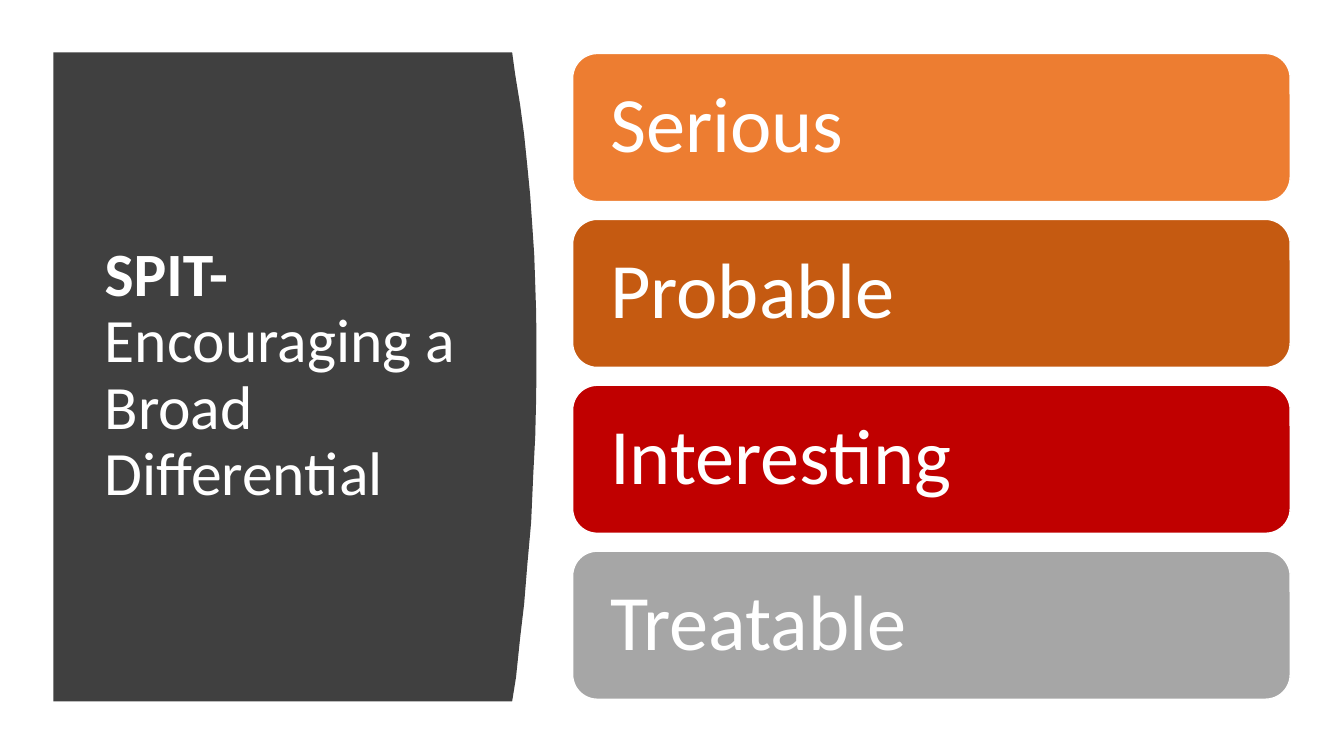
from pptx import Presentation
from pptx import util as u
from pptx.dml.color import RGBColor
from pptx.enum import shapes, text

WHITE = RGBColor(0xFF, 0xFF, 0xFF)
CHARCOAL = RGBColor(0x40, 0x40, 0x40)
ORANGE = RGBColor(0xED, 0x7D, 0x31)
BROWN = RGBColor(0xC5, 0x5A, 0x11)
RED = RGBColor(0xC0, 0x00, 0x00)
GRAY = RGBColor(0xA6, 0xA6, 0xA6)
FONT = "Calibri"


def style_run(r, size, bold=False):
    r.font.name = FONT
    r.font.size = u.Pt(size)
    r.font.bold = bold
    r.font.color.rgb = WHITE


prs = Presentation()
prs.slide_width, prs.slide_height = u.Pt(960), u.Pt(540)
s = prs.slides.add_slide(prs.slide_layouts[6])

LEFT, TOP, BOTTOM = 38.2, 37.4, 501.1
curve = [
    (365.8, TOP), (368, 53.3), (371.5, 74.9), (374.4, 96.5), (376.6, 118.1),
    (378.7, 139.7), (380.2, 161.3), (381.6, 182.2), (382.3, 203), (383, 224),
    (383.2, 254.2), (383, 283.7), (382.3, 311.8), (380.9, 339.1), (379.4, 373),
    (376.6, 404), (374.4, 431.3), (371.5, 455.8), (368.6, 483.8), (365.8, BOTTOM),
]
fb = s.shapes.build_freeform(u.Pt(LEFT), u.Pt(TOP), scale=1.0)
fb.add_line_segments([(u.Pt(x), u.Pt(y)) for x, y in curve + [(LEFT, BOTTOM)]])
sp = fb.convert_to_shape()
sp.shadow.inherit = False
sp.fill.solid()
sp.fill.fore_color.rgb = CHARCOAL
sp.line.fill.background()

tb = s.shapes.add_textbox(u.Pt(67.7), u.Pt(79.9), u.Pt(269.3), u.Pt(377.3))
tf = tb.text_frame
tf.word_wrap = True
tf.vertical_anchor = text.MSO_ANCHOR.MIDDLE
p = tf.paragraphs[0]
p.line_spacing = 0.9
for words, bold in [("SPIT-", True), (" Encouraging a Broad Differential", False)]:
    r = p.add_run()
    r.text = words
    style_run(r, 44, bold)

categories = [("Serious", ORANGE), ("Probable", BROWN), ("Interesting", RED), ("Treatable", GRAY)]
for i, (name, color) in enumerate(categories):
    sp = s.shapes.add_shape(shapes.MSO_SHAPE.ROUNDED_RECTANGLE,
                            u.Pt(409), u.Pt(38.2 + 118.5 * i), u.Pt(512.6), u.Pt(105.8))
    sp.shadow.inherit = False
    sp.fill.solid()
    sp.fill.fore_color.rgb = color
    sp.line.color.rgb = WHITE
    sp.line.width = u.Pt(1)
    tf = sp.text_frame
    tf.word_wrap = True
    tf.vertical_anchor = text.MSO_ANCHOR.MIDDLE
    tf.margin_left = tf.margin_right = tf.margin_top = tf.margin_bottom = u.Pt(21.6)
    tf.text = name
    p = tf.paragraphs[0]
    p.alignment = text.PP_ALIGN.LEFT
    p.line_spacing = 0.9
    style_run(p.runs[0], 56)

prs.save("out.pptx")
